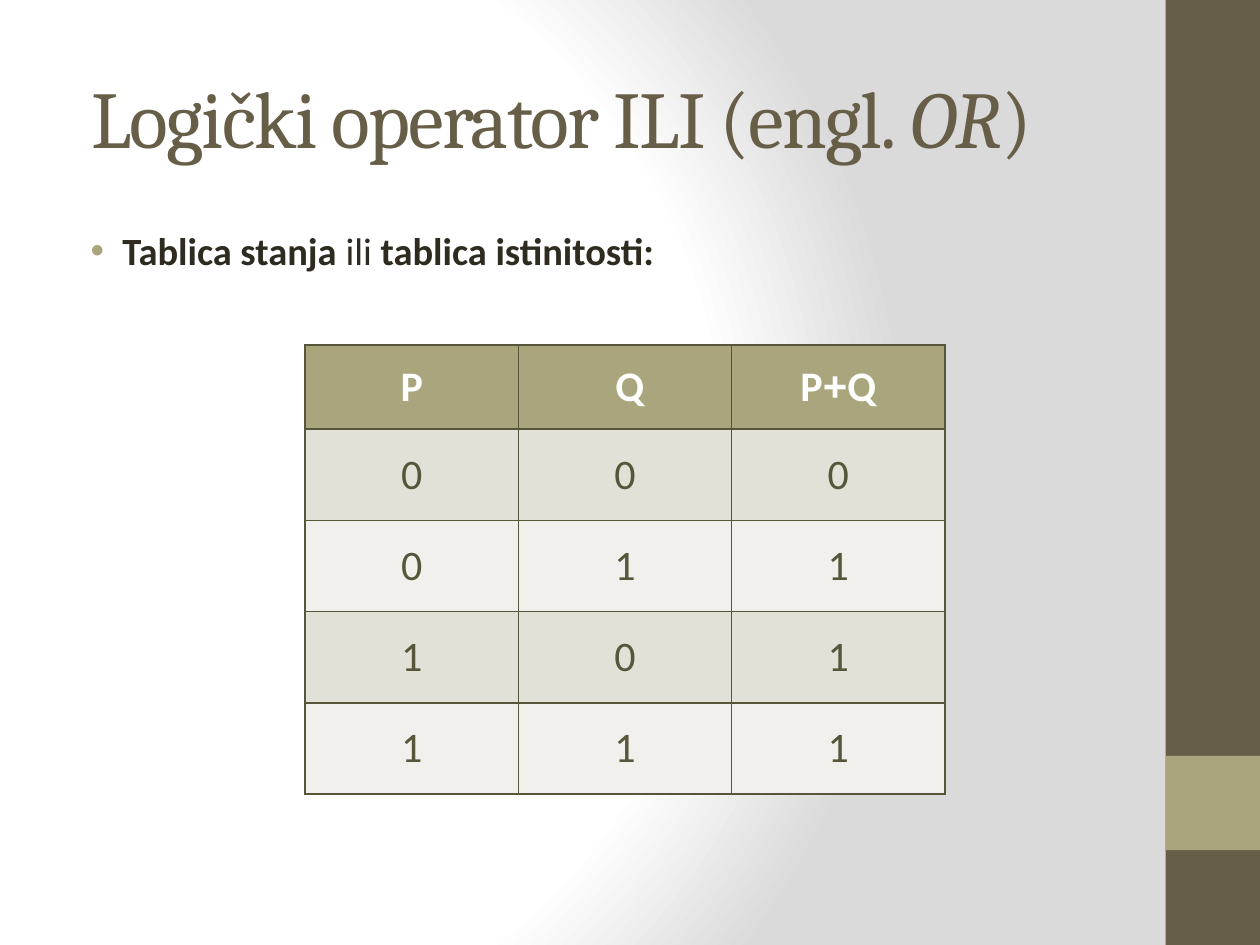
import pptx
import pptx.dml.color
import pptx.enum.shapes
import pptx.enum.text
import pptx.oxml
import pptx.oxml.ns
import pptx.util
from pptx.util import Cm, Pt

BROWN, OLIVE, INK, DARK_OLIVE, WHITE = "675E47", "A9A57C", "2F2B20", "58563A", "FFFFFF"
ROW_TINTS = ["E2E1D7", "F1F0EC"]
TRUTH_TABLE = ["000", "011", "101", "111"]
NAMESPACE = pptx.oxml.ns.nsdecls("a")


def color(hex_value):
    return pptx.dml.color.RGBColor.from_string(hex_value)


def paint_background(slide):
    """Fill the background with a circular gradient, white to grey."""
    fill = slide.background.fill
    fill.gradient()
    stops = "".join(
        f'<a:gs pos="{position * 1000}"><a:srgbClr val="{shade}"/></a:gs>'
        for position, shade in [(0, WHITE), (75, WHITE), (100, "DADADA")])
    gradient = pptx.oxml.parse_xml(
        f'<a:gradFill {NAMESPACE} rotWithShape="1"><a:gsLst>{stops}</a:gsLst>'
        '<a:path path="circle"><a:fillToRect l="20000" t="50000" r="100000" b="50000"/>'
        '</a:path></a:gradFill>')
    properties = slide.background._cSld.bg.bgPr
    properties.replace(properties.find(pptx.oxml.ns.qn("a:gradFill")), gradient)


def add_band(slide, top, height, shade):
    band = slide.shapes.add_shape(
        pptx.enum.shapes.MSO_SHAPE.RECTANGLE, Cm(23.5), Cm(top), Cm(1.9), Cm(height))
    band.shadow.inherit = False
    band.fill.solid()
    band.fill.fore_color.rgb = color(shade)
    band.line.fill.background()


def add_run(paragraph, text, font, size, shade, bold=False, italic=False):
    run = paragraph.add_run()
    run.text = text
    run.font.name = font
    run.font.size = Pt(size)
    run.font.bold = bold
    run.font.italic = italic
    run.font.color.rgb = color(shade)
    return run


def add_text_frame(slide, top, height, anchor):
    frame = slide.shapes.add_textbox(Cm(1.27), Cm(top), Cm(21.16), Cm(height)).text_frame
    frame.word_wrap = True
    frame.vertical_anchor = anchor
    return frame


def add_title(slide):
    frame = add_text_frame(slide, 0.76, 3.18, pptx.enum.text.MSO_ANCHOR.MIDDLE)
    for text, italic in [(" Logički operator ILI (engl. ", False), ("OR", True), (")", False)]:
        run = add_run(frame.paragraphs[0], text, "Cambria", 46, BROWN, italic=italic)
        run.font._element.set("spc", "-100")


def add_bullet(slide):
    frame = add_text_frame(slide, 4.45, 13.33, pptx.enum.text.MSO_ANCHOR.TOP)
    paragraph = frame.paragraphs[0]
    paragraph.space_before = Pt(4.4)
    properties = paragraph._p.get_or_add_pPr()
    properties.set("marL", str(Cm(0.95)))
    properties.set("indent", str(-Cm(0.64)))
    for marker in (f'<a:buClr {NAMESPACE}><a:srgbClr val="{OLIVE}"/></a:buClr>',
                   f'<a:buFont {NAMESPACE} typeface="Arial"/>',
                   f'<a:buChar {NAMESPACE} char="•"/>'):
        properties.append(pptx.oxml.parse_xml(marker))
    for text, bold in [("Tablica stanja ", True), ("ili ", False), ("tablica istinitosti:", True)]:
        add_run(paragraph, text, "Calibri", 22, INK, bold)


def add_borders(cell):
    properties = cell._tc.get_or_add_tcPr()
    for index, side in enumerate(("lnL", "lnR", "lnT", "lnB")):
        properties.insert(index, pptx.oxml.parse_xml(
            f'<a:{side} {NAMESPACE} w="{Pt(1)}"><a:solidFill>'
            f'<a:srgbClr val="{DARK_OLIVE}"/></a:solidFill></a:{side}>'))


def fill_cell(cell, texts, background, shade, bold=False, spacing=0):
    cell.fill.solid()
    cell.fill.fore_color.rgb = color(background)
    cell.vertical_anchor = pptx.enum.text.MSO_ANCHOR.MIDDLE
    cell.margin_left = cell.margin_right = Cm(0.18)
    cell.margin_top = cell.margin_bottom = 0
    paragraph = cell.text_frame.paragraphs[0]
    paragraph.alignment = pptx.enum.text.PP_ALIGN.CENTER
    paragraph.space_before = paragraph.space_after = Pt(spacing)
    for text in texts:
        add_run(paragraph, text, "Arial" if text == "+" else "Calibri", 24, shade, bold)
    add_borders(cell)


def add_truth_table(slide):
    table = slide.shapes.add_table(
        len(TRUTH_TABLE) + 1, 3, Cm(6.15), Cm(6.95), Cm(12.9), Cm(9.06)).table
    for column in table.columns:
        column.width = Cm(4.3)
    for index, row in enumerate(table.rows):
        row.height = Cm(1.84 if index else 1.7)
    for cell, texts in zip(table.rows[0].cells, [["P"], [" Q"], ["P", "+", "Q"]]):
        fill_cell(cell, texts, OLIVE, WHITE, bold=True, spacing=6)
    for index, values in enumerate(TRUTH_TABLE):
        for cell, value in zip(table.rows[index + 1].cells, values):
            fill_cell(cell, [value], ROW_TINTS[index % 2], DARK_OLIVE)


def main():
    presentation = pptx.Presentation()
    presentation.slide_width, presentation.slide_height = Cm(25.4), Cm(19.05)
    slide = presentation.slides.add_slide(presentation.slide_layouts[6])
    paint_background(slide)
    add_band(slide, 0, 19.05, BROWN)
    add_band(slide, 15.24, 1.9, OLIVE)
    add_title(slide)
    add_bullet(slide)
    add_truth_table(slide)
    presentation.save("out.pptx")


if __name__ == "__main__":
    main()
